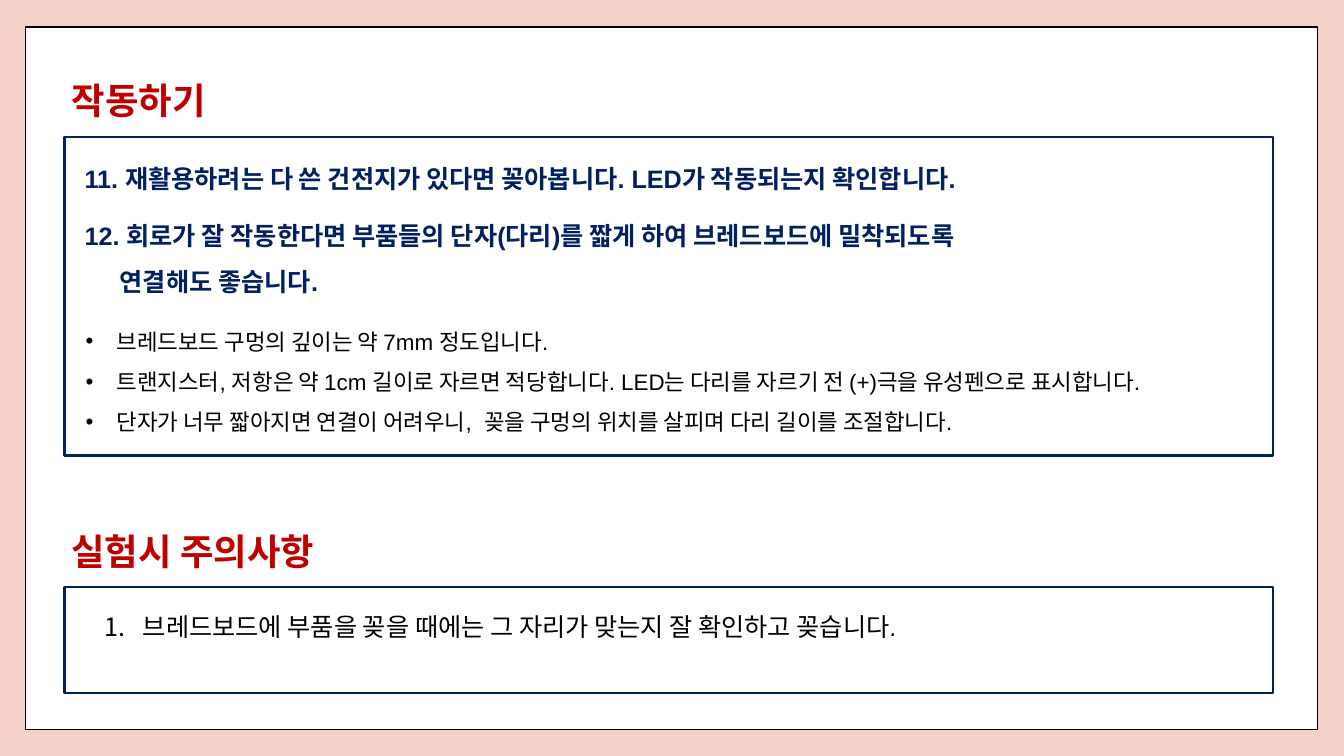
import pptx
import pptx.dml.color
import pptx.enum.shapes
import pptx.enum.text
import pptx.oxml
import pptx.oxml.ns
import pptx.util
from dataclasses import dataclass

Inches = pptx.util.Inches

HEADINGS = [("작동하기", 0.67), ("실험시 주의사항", 5.15)]
PANELS = [(1.36, 3.16), (5.82, 1.06)]
STEPS = [
    ("11. 재활용하려는 다 쓴 건전지가 있다면 꽂아봅니다. LED가 작동되는지 확인합니다.", 1.42, 0.51),
    ("12. 회로가 잘 작동한다면 부품들의 단자(다리)를 짧게 하여 브레드보드에 밀착되도록\v연결해도 좋습니다.", 1.99, 1.01),
]
TIPS = [
    "브레드보드 구멍의 깊이는 약 7mm 정도입니다.",
    "트랜지스터, 저항은 약 1cm 길이로 자르면 적당합니다. LED는 다리를 자르기 전 (+)극을 유성펜으로 표시합니다.",
    "단자가 너무 짧아지면 연결이 어려우니,  꽂을 구멍의 위치를 살피며 다리 길이를 조절합니다.",
]
CAUTIONS = ["브레드보드에 부품을 꽂을 때에는 그 자리가 맞는지 잘 확인하고 꽂습니다."]


@dataclass(frozen=True)
class Theme:
    background: str = "F7D1C9"
    paper: str = "FFFFFF"
    ink: str = "000000"
    navy: str = "002060"
    red: str = "C00000"
    body_font: str = "Arial"
    heading_font: str = "Cabin"
    heading_size: int = 26
    step_size: int = 18
    tip_size: int = 16


THEME = Theme()


def color(value):
    return pptx.dml.color.RGBColor.from_string(value)


def place(shape, left, top, width, height):
    shape.left, shape.top = Inches(left), Inches(top)
    shape.width, shape.height = Inches(width), Inches(height)


def add_panel(slide, box, line_color, line_width):
    panel = slide.shapes.add_shape(
        pptx.enum.shapes.MSO_SHAPE.RECTANGLE, *map(Inches, box))
    panel.shadow.inherit = False
    panel.fill.solid()
    panel.fill.fore_color.rgb = color(THEME.paper)
    panel.line.color.rgb = color(line_color)
    panel.line.width = pptx.util.Pt(line_width)
    return panel


def style_paragraph(paragraph, name, size, font_color, bold=False, spacing=1.0):
    paragraph.alignment = pptx.enum.text.PP_ALIGN.LEFT
    paragraph.line_spacing = spacing
    font = paragraph.font
    font.name, font.size, font.bold = name, pptx.util.Pt(size), bold
    font.color.rgb = color(font_color)


def hang(paragraph, indent, marker=None, marker_font=None):
    properties = paragraph._p.get_or_add_pPr()
    properties.set("marL", str(Inches(indent)))
    properties.set("indent", str(-Inches(indent)))
    if marker:
        namespace = pptx.oxml.ns.nsdecls("a")
        font = pptx.oxml.parse_xml(f'<a:buFont {namespace} typeface="{marker_font}"/>')
        bullet = pptx.oxml.parse_xml(f"<a:{marker[0]} {namespace} {marker[1]}/>")
        position = 1 if paragraph.line_spacing else 0
        properties.insert(position, font)
        properties.insert(position + 1, bullet)


def add_text(slide, box, lines, size, font_color, indent, bold=False, spacing=1.5,
             marker=None, marker_font=THEME.body_font):
    frame = slide.shapes.add_textbox(*map(Inches, box)).text_frame
    frame.word_wrap = True
    for index, line in enumerate(lines):
        paragraph = frame.add_paragraph() if index else frame.paragraphs[0]
        paragraph.text = line
        style_paragraph(paragraph, THEME.body_font, size, font_color, bold, spacing)
        hang(paragraph, indent, marker, marker_font)


def format_heading(shape, text, top):
    place(shape, 0.61, top, 7.75, 0.48)
    frame = shape.text_frame
    frame.word_wrap = True
    frame.auto_size = pptx.enum.text.MSO_AUTO_SIZE.NONE
    frame.vertical_anchor = pptx.enum.text.MSO_ANCHOR.TOP
    frame.margin_left = frame.margin_right = Inches(0.1)
    frame.margin_top = frame.margin_bottom = Inches(0.1)
    frame.text = text
    style_paragraph(frame.paragraphs[0], THEME.heading_font, THEME.heading_size,
                    THEME.red, bold=True)


def main():
    presentation = pptx.Presentation()
    presentation.slide_width = Inches(13.33)
    presentation.slide_height = Inches(7.5)
    slide = presentation.slides.add_slide(presentation.slide_layouts[5])
    slide.background.fill.solid()
    slide.background.fill.fore_color.rgb = color(THEME.background)

    title = slide.shapes.title
    page = add_panel(slide, (0.25, 0.27, 12.82, 6.97), THEME.ink, 1)
    title.element.addprevious(page.element)
    for top, height in PANELS:
        add_panel(slide, (0.64, top, 11.99, height), THEME.navy, 1.5)

    second_heading = slide.shapes.add_textbox(0, 0, 0, 0)
    for shape, (text, top) in zip((title, second_heading), HEADINGS):
        format_heading(shape, text, top)

    for text, top, height in STEPS:
        add_text(slide, (0.74, top, 11.77, height), [text], THEME.step_size,
                 THEME.navy, 0.35, bold=True)
    add_text(slide, (0.75, 3.07, 11.77, 1.31), TIPS, THEME.tip_size, THEME.ink,
             0.31, marker=("buChar", 'char="•"'))
    add_text(slide, (0.94, 6.02, 11.5, 0.4), CAUTIONS, THEME.step_size, THEME.ink,
             0.38, spacing=1.0, marker=("buAutoNum", 'type="arabicPeriod"'),
             marker_font=THEME.heading_font)
    presentation.save("out.pptx")


if __name__ == "__main__":
    main()
